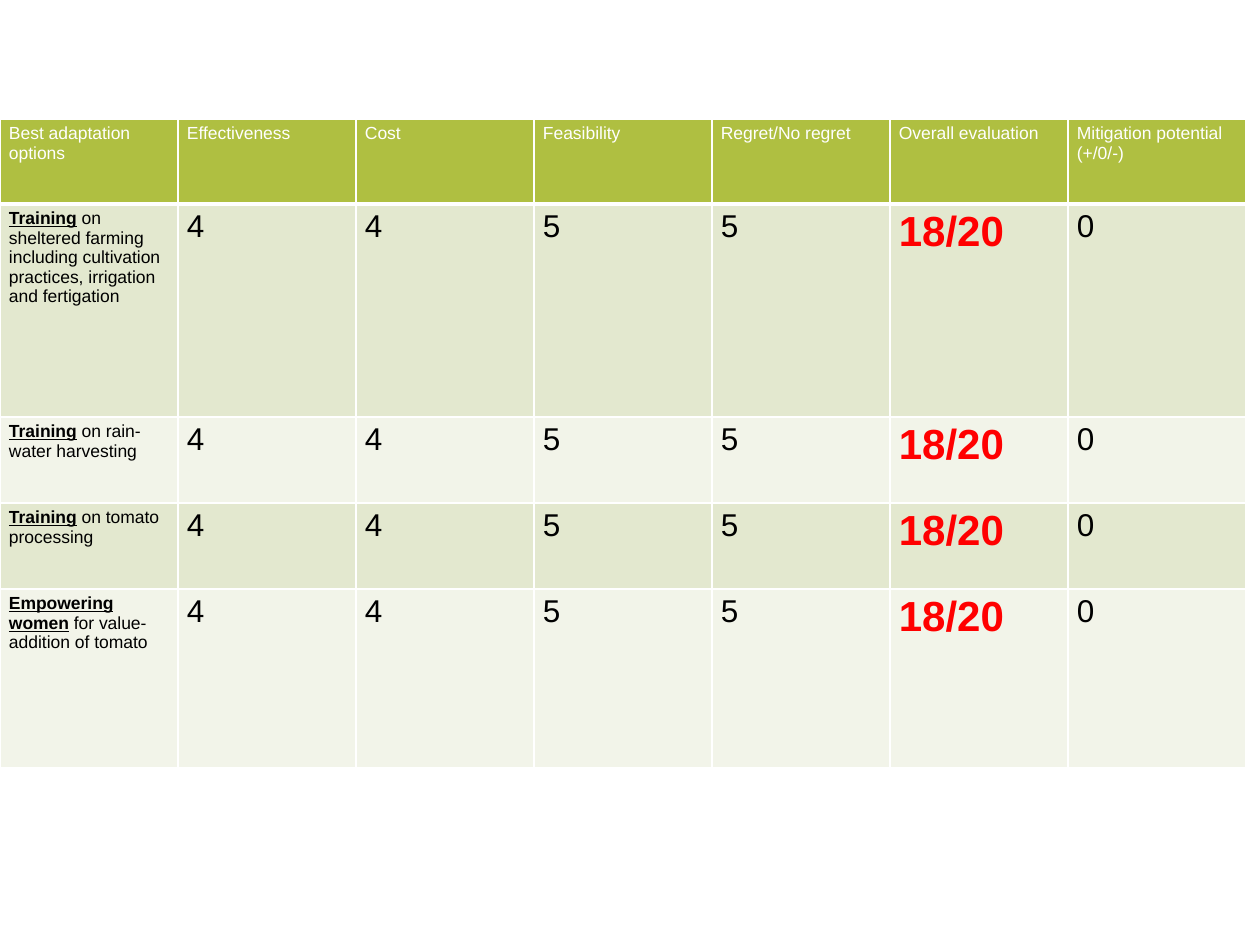
from lxml import etree
from pptx import Presentation
from pptx.dml.color import RGBColor
from pptx.oxml.ns import qn
from pptx.util import Pt

PX = 914400 // 126
WHITE = RGBColor(0xFF, 0xFF, 0xFF)
BLACK = RGBColor(0, 0, 0)
RED = RGBColor(0xFF, 0, 0)
GREEN = RGBColor(0xAF, 0xBF, 0x41)
BANDS = (RGBColor(0xE3, 0xE8, 0xCF), RGBColor(0xF2, 0xF4, 0xE9))

COLUMN_WIDTH = 178
ROW_HEIGHTS = (85, 213, 86, 86, 179)
HEADERS = ("Best adaptation options", "Effectiveness", "Cost", "Feasibility",
           "Regret/No regret", "Overall evaluation", "Mitigation potential (+/0/-)")
# Option names alternate between emphasised and plain text.
OPTIONS = (
    ("Training", " on sheltered farming including cultivation practices, irrigation and fertigation"),
    ("Training", " on rain-water harvesting"),
    ("Training", " on tomato processing"),
    ("Empowering", " ", "women", " for value-addition of tomato"),
)
SCORES = ("4", "4", "5", "5")
OVERALL = "18/20"
MITIGATION = "0"


def px(n):
    return n * PX


def add_borders(cell, bottom=1):
    tc_pr = cell._tc.get_or_add_tcPr()
    widths = {"a:lnL": 1, "a:lnR": 1, "a:lnT": 1, "a:lnB": bottom}
    for i, (tag, width) in enumerate(widths.items()):
        ln = etree.Element(qn(tag), w=str(Pt(width)))
        fill = etree.SubElement(ln, qn("a:solidFill"))
        etree.SubElement(fill, qn("a:srgbClr"), val=str(WHITE))
        tc_pr.insert(i, ln)


def fill_cell(cell, texts, size, color, fill, bold=False, bottom=1):
    """Write one paragraph; with several texts, every other one is emphasised."""
    cell.margin_left = cell.margin_right = px(9)
    cell.margin_top = cell.margin_bottom = px(5)
    cell.fill.solid()
    cell.fill.fore_color.rgb = fill
    add_borders(cell, bottom)
    p = cell.text_frame.paragraphs[0]
    p.font.name = "Arial"
    p.font.size = Pt(size)
    p.font.color.rgb = color
    p.font.bold = bold
    for i, text in enumerate(texts):
        r = p.add_run()
        r.text = text
        # Runs do not take over paragraph defaults everywhere
        r.font.name = "Arial"
        r.font.size = Pt(size)
        r.font.color.rgb = color
        emphasised = len(texts) > 1 and i % 2 == 0
        r.font.bold = bold or emphasised
        r.font.underline = emphasised


def add_evaluation_table(s):
    rows, cols = len(ROW_HEIGHTS), len(HEADERS)
    table = s.shapes.add_table(rows, cols, 0, px(119), px(COLUMN_WIDTH * cols),
                               px(sum(ROW_HEIGHTS))).table
    for column in table.columns:
        column.width = px(COLUMN_WIDTH)
    for row, height in zip(table.rows, ROW_HEIGHTS):
        row.height = px(height)
    for col, header in enumerate(HEADERS):
        fill_cell(table.cell(0, col), [header], 10, WHITE, GREEN, bottom=3)
    for row, option in enumerate(OPTIONS, start=1):
        band = BANDS[(row - 1) % 2]
        fill_cell(table.cell(row, 0), option, 10, BLACK, band)
        for col, score in enumerate(SCORES, start=1):
            fill_cell(table.cell(row, col), [score], 18, BLACK, band)
        fill_cell(table.cell(row, cols - 2), [OVERALL], 24, RED, band, bold=True)
        fill_cell(table.cell(row, cols - 1), [MITIGATION], 18, BLACK, band)


def main():
    prs = Presentation()
    prs.slide_width, prs.slide_height = px(1260), px(945)
    s = prs.slides.add_slide(prs.slide_layouts[6])
    add_evaluation_table(s)
    prs.save("out.pptx")


if __name__ == "__main__":
    main()
